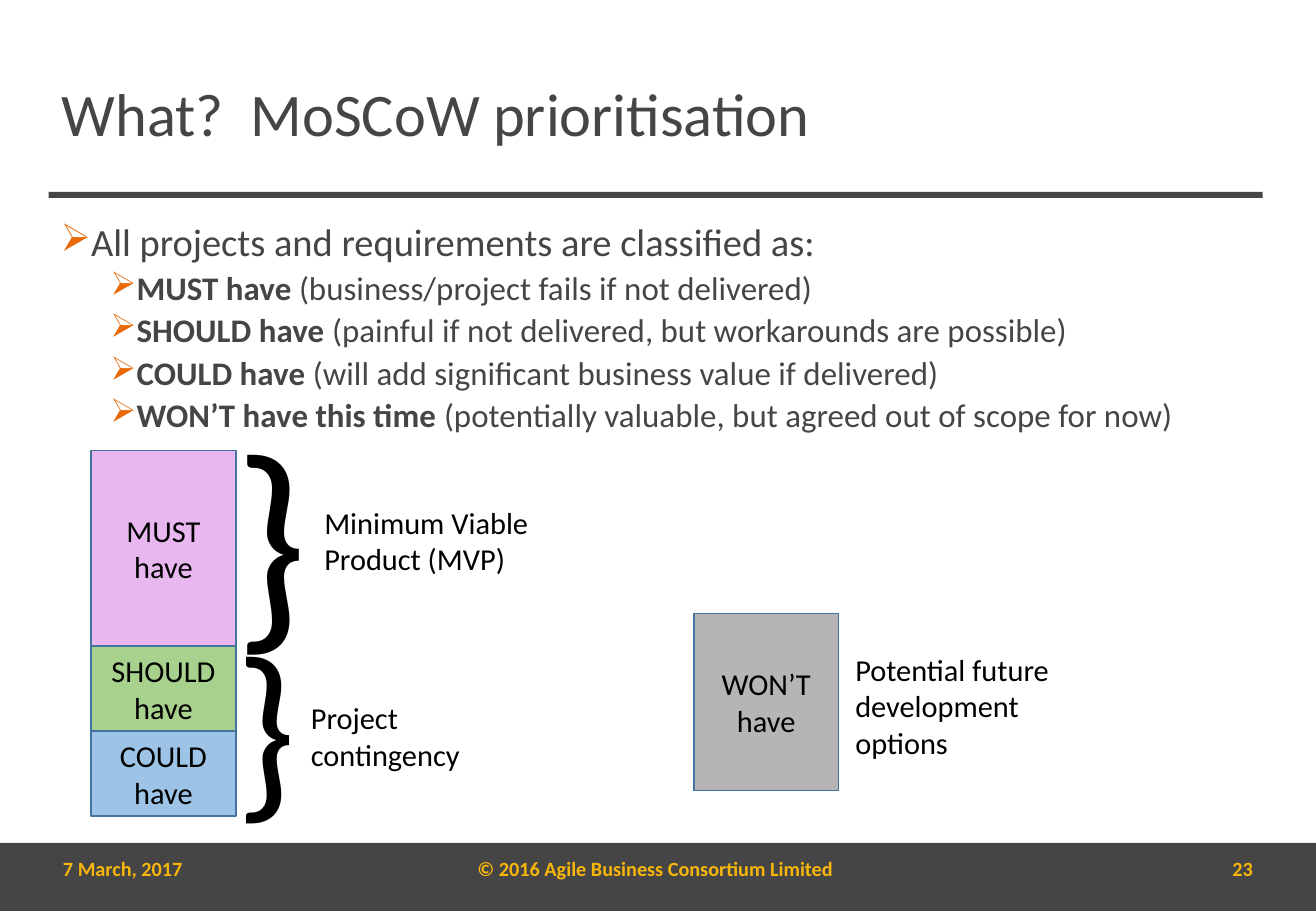
from dataclasses import dataclass
from typing import Optional

from lxml.etree import SubElement
from pptx import Presentation
from pptx.dml.color import RGBColor
from pptx.enum.shapes import MSO_SHAPE
from pptx.enum.text import MSO_ANCHOR, PP_ALIGN
from pptx.oxml.ns import qn
from pptx.util import Inches, Pt

FONT = "Calibri"
CHARCOAL = RGBColor(0x45, 0x45, 0x45)
BLACK = RGBColor(0, 0, 0)
ORANGE = RGBColor(0xE8, 0x69, 0x08)
AMBER = RGBColor(0xF9, 0xB6, 0x0A)
BOX_BORDER = RGBColor(0x43, 0x73, 0x9E)
PINK = RGBColor(0xE8, 0xB7, 0xEF)
GREEN = RGBColor(0xA9, 0xD1, 0x8E)
BLUE = RGBColor(0x9D, 0xC3, 0xE6)
GREY = RGBColor(0xB5, 0xB5, 0xB5)

BOX_WIDTH = 1.19
STACK_LEFT = 0.75
WONT_LEFT = 5.71


@dataclass
class Area:
    left: float
    top: float
    width: float
    height: float

    def lengths(self) -> tuple:
        return tuple(Inches(v) for v in (self.left, self.top, self.width, self.height))


@dataclass
class Box:
    area: Area
    fill: RGBColor
    lines: tuple = ()
    border: Optional[RGBColor] = None


@dataclass
class Label:
    area: Area
    text: str
    size: float = 18
    color: RGBColor = BLACK
    bold: bool = False
    align: PP_ALIGN = PP_ALIGN.LEFT
    anchor: MSO_ANCHOR = MSO_ANCHOR.TOP
    line_spacing: float = 1.0


@dataclass
class Bullet:
    strong: str
    plain: str
    size: float = 19.5
    level: int = 1
    margin: float = 0.61
    space_before: float = 4.1


BARS = [
    Box(Area(0, 6.94, 10.83, 0.56), CHARCOAL),
    Box(Area(0.4, 1.58, 9.99, 0.05), CHARCOAL),
]

PRIORITIES = [
    Box(Area(STACK_LEFT, 3.71, BOX_WIDTH, 1.61), PINK, ("MUST have",), BOX_BORDER),
    Box(Area(STACK_LEFT, 5.32, BOX_WIDTH, 0.7), GREEN, ("SHOULD", "have"), BOX_BORDER),
    Box(Area(STACK_LEFT, 6.02, BOX_WIDTH, 0.7), BLUE, ("COULD", "have"), BOX_BORDER),
    Box(Area(WONT_LEFT, 5.05, BOX_WIDTH, 1.46), GREY, ("WON’T", "have"), BOX_BORDER),
]

BULLETS = [
    Bullet("", "All projects and requirements are classified as:", 22.8, 0, 0.2, 0),
    Bullet("MUST have ", "(business/project fails if not delivered)"),
    Bullet("SHOULD have ", "(painful if not delivered, but workarounds are possible)"),
    Bullet("COULD have ", "(will add significant business value if delivered)"),
    Bullet("WON’T have this time ", "(potentially valuable, but agreed out of scope for now)"),
]

LABELS = [
    Label(Area(1.83, 3.17, 0.99, 2.42), "}", 138),
    Label(Area(2.57, 4.1, 1.88, 0.71), "Minimum Viable Product (MVP)"),
    Label(Area(1.84, 4.92, 0.99, 2.04), "}", 115),
    Label(Area(2.46, 5.71, 1.88, 0.71), "Project contingency"),
    Label(Area(6.94, 5.31, 1.88, 1.01), "Potential future development options"),
    Label(Area(0.41, 0.4, 7.87, 1.13), "What?  MoSCoW prioritisation", 35.8, CHARCOAL,
          anchor=MSO_ANCHOR.MIDDLE, line_spacing=0.9),
]

FOOTERS = [
    Label(Area(left, 6.95, width, 0.4), text, 12, AMBER, True, align, MSO_ANCHOR.MIDDLE)
    for left, width, text, align in (
        (0.42, 2.53, "7 March, 2017", PP_ALIGN.LEFT),
        (3.68, 3.43, "© 2016 Agile Business Consortium Limited", PP_ALIGN.CENTER),
        (7.88, 2.53, "23", PP_ALIGN.RIGHT),
    )
]


def add_run(paragraph, text: str, size: float, color: RGBColor, bold: bool = False) -> None:
    run = paragraph.add_run()
    run.text = text
    run.font.name = FONT
    run.font.size = Pt(size)
    run.font.bold = bold
    run.font.color.rgb = color


def next_paragraph(text_frame, index: int):
    return text_frame.add_paragraph() if index else text_frame.paragraphs[0]


def draw_box(slide, box: Box) -> None:
    shape = slide.shapes.add_shape(MSO_SHAPE.RECTANGLE, *box.area.lengths())
    shape.shadow.inherit = False
    shape.fill.solid()
    shape.fill.fore_color.rgb = box.fill
    if box.border is None:
        shape.line.fill.background()
    else:
        shape.line.color.rgb = box.border
        shape.line.width = Pt(1)
    text_frame = shape.text_frame
    text_frame.word_wrap = True
    text_frame.vertical_anchor = MSO_ANCHOR.MIDDLE
    for index, line in enumerate(box.lines):
        paragraph = next_paragraph(text_frame, index)
        paragraph.alignment = PP_ALIGN.CENTER
        add_run(paragraph, line, 18, BLACK)


def draw_label(slide, label: Label) -> None:
    text_frame = slide.shapes.add_textbox(*label.area.lengths()).text_frame
    text_frame.word_wrap = True
    text_frame.vertical_anchor = label.anchor
    paragraph = text_frame.paragraphs[0]
    paragraph.alignment = label.align
    paragraph.line_spacing = label.line_spacing
    add_run(paragraph, label.text, label.size, label.color, label.bold)


def add_bullet_mark(paragraph, margin: float) -> None:
    properties = paragraph._p.get_or_add_pPr()
    properties.set("marL", str(Inches(margin)))
    properties.set("indent", str(Inches(-0.2)))
    color = SubElement(properties, qn("a:buClr"))
    SubElement(color, qn("a:srgbClr")).set("val", str(ORANGE))
    SubElement(properties, qn("a:buChar")).set("char", "➢")


def draw_bullets(slide, area: Area, bullets: list[Bullet]) -> None:
    text_frame = slide.shapes.add_textbox(*area.lengths()).text_frame
    text_frame.word_wrap = True
    for index, bullet in enumerate(bullets):
        paragraph = next_paragraph(text_frame, index)
        paragraph.level = bullet.level
        paragraph.line_spacing = 0.9
        paragraph.space_before = Pt(bullet.space_before)
        add_bullet_mark(paragraph, bullet.margin)
        if bullet.strong:
            add_run(paragraph, bullet.strong, bullet.size, CHARCOAL, True)
        add_run(paragraph, bullet.plain, bullet.size, CHARCOAL)


def main() -> None:
    presentation = Presentation()
    presentation.slide_width = Inches(10.83)
    presentation.slide_height = Inches(7.5)
    slide = presentation.slides.add_slide(presentation.slide_layouts[6])
    for bar in BARS:
        draw_box(slide, bar)
    draw_bullets(slide, Area(0.4, 1.79, 9.92, 5.08), BULLETS)
    for priority in PRIORITIES:
        draw_box(slide, priority)
    for label in LABELS + FOOTERS:
        draw_label(slide, label)
    presentation.save("out.pptx")


if __name__ == "__main__":
    main()
